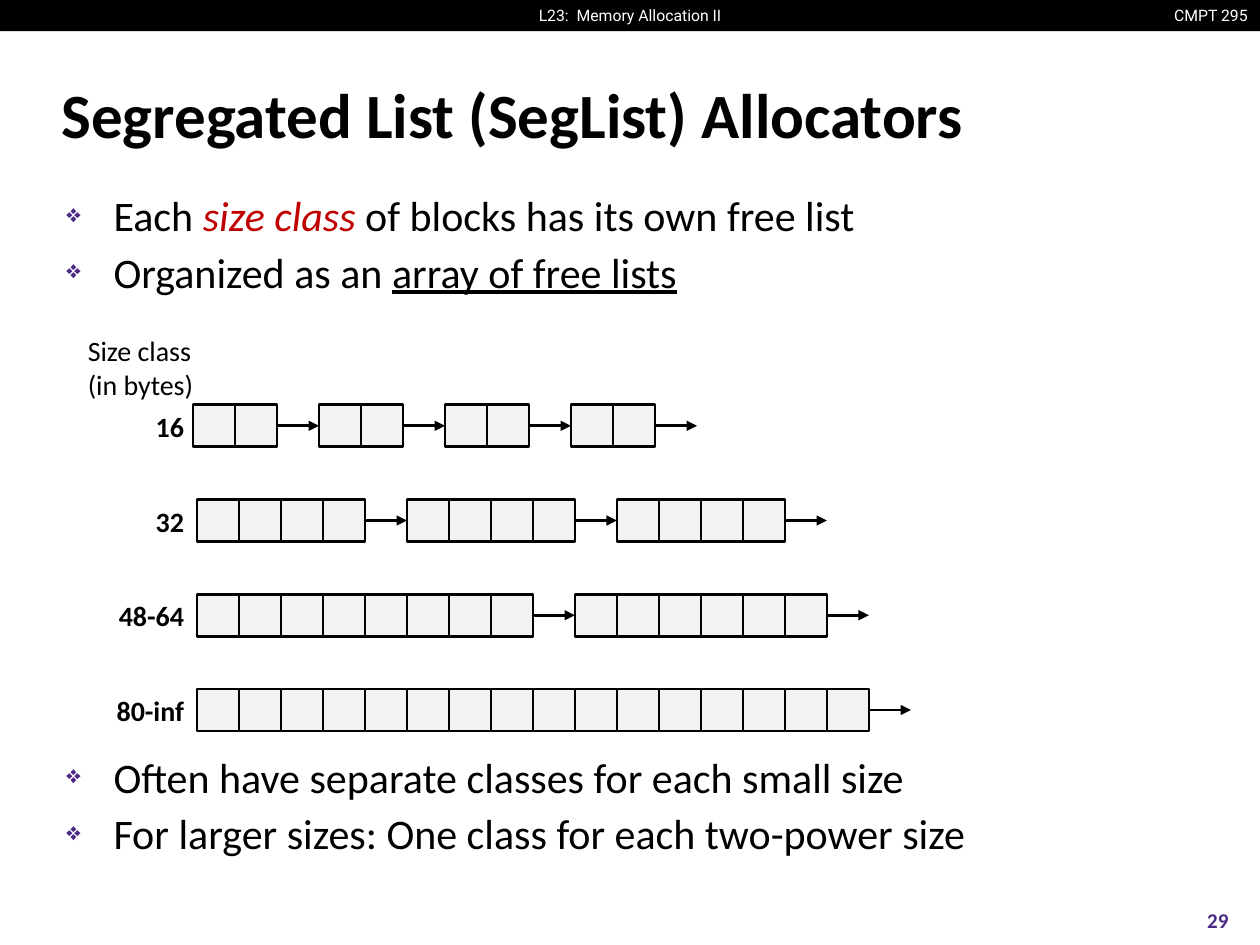
"""Build the slide on segregated list allocators."""
import dataclasses

import lxml.etree
import pptx
import pptx.dml.color
import pptx.enum.shapes
import pptx.enum.text
import pptx.oxml.ns
import pptx.util

Cm = pptx.util.Cm
Pt = pptx.util.Pt
ALIGN = pptx.enum.text.PP_ALIGN
ANCHOR = pptx.enum.text.MSO_ANCHOR


@dataclasses.dataclass(frozen=True)
class Theme:
    black: str = "000000"
    white: str = "FFFFFF"
    cell: str = "F2F2F2"
    accent: str = "4B2A85"
    emphasis: str = "C00000"
    body_font: str = "Calibri"
    header_font: str = "Roboto"
    header: int = 9
    number: int = 12
    label: int = 16
    body: int = 24
    title: int = 36
    line: float = 1.5


THEME = Theme()
CELL = Cm(2.54 / 3)
ROW_TOP = Cm(8.16)
ROW_PITCH = Cm(1.91)
ROWS = [
    ("16", Cm(3.89), [2, 2, 2, 2]),
    ("32", Cm(3.97), [4, 4, 4]),
    ("48-64", Cm(3.97), [8, 6]),
    ("80-inf", Cm(3.97), [16]),
]
TOP_BULLETS = [
    [("Each ", None), ("size class ", "italic"), ("of blocks has its own free list", None)],
    [("Organized as an ", None), ("array of free lists", "underline")],
]
BOTTOM_BULLETS = [
    [("Often have separate classes for each small size", None)],
    [("For larger sizes: One class for each two-power size", None)],
]


def rgb(color):
    return pptx.dml.color.RGBColor.from_string(color)


def set_font(font, size, color=THEME.black, bold=False, name=THEME.body_font):
    font.name, font.size, font.bold = name, Pt(size), bold
    font.color.rgb = rgb(color)


def add_frame(s, x, y, w, h, wrap=True, anchor=ANCHOR.TOP):
    tf = s.shapes.add_textbox(x, y, w, h).text_frame
    tf.word_wrap = wrap
    tf.vertical_anchor = anchor
    return tf


def add_text(s, text, box, size, align=ALIGN.LEFT, wrap=False, anchor=ANCHOR.TOP, **font):
    p = add_frame(s, *box, wrap, anchor).paragraphs[0]
    p.text = text
    p.alignment = align
    set_font(p.font, size, **font)


def add_rect(s, x, y, w, h, fill, line=None):
    sp = s.shapes.add_shape(pptx.enum.shapes.MSO_SHAPE.RECTANGLE, x, y, w, h)
    sp.shadow.inherit = False
    sp.fill.solid()
    sp.fill.fore_color.rgb = rgb(fill)
    if line:
        sp.line.color.rgb = rgb(line)
        sp.line.width = Pt(THEME.line)
    else:
        sp.line.fill.background()
    return sp


def add_child(parent, tag, **attrs):
    return lxml.etree.SubElement(parent, pptx.oxml.ns.qn(tag), attrs)


def add_bullet(p):
    pPr = p._p.get_or_add_pPr()
    pPr.set("marL", str(Cm(0.95)))
    pPr.set("indent", str(-Cm(0.95)))
    add_child(add_child(pPr, "a:buClr"), "a:srgbClr", val=THEME.accent)
    add_child(pPr, "a:buSzPct", val="60000")
    add_child(pPr, "a:buChar", char="❖")


def add_bullets(s, items, y):
    tf = add_frame(s, Cm(1.09), y, Cm(23.24), Cm(2.7))
    for i, runs in enumerate(items):
        p = tf.paragraphs[0] if i == 0 else tf.add_paragraph()
        add_bullet(p)
        p.line_spacing = 0.95
        p.space_before = Pt(4.8)
        set_font(p.font, THEME.body)
        for text, style in runs:
            r = p.add_run()
            r.text = text
            if style == "italic":
                r.font.italic = True
                r.font.color.rgb = rgb(THEME.emphasis)
            elif style == "underline":
                r.font.underline = True


def add_arrow(s, start, end=None):
    x, y = start.left + CELL, start.top + CELL // 2
    c = s.shapes.add_connector(pptx.enum.shapes.MSO_CONNECTOR.STRAIGHT, x, y, x + CELL, y)
    c.begin_connect(start, 3)
    if end is not None:
        c.end_connect(end, 1)
    c.line.color.rgb = rgb(THEME.black)
    c.line.width = Pt(THEME.line)
    add_child(c.line._get_or_add_ln(), "a:tailEnd", type="triangle")
    add_child(c._element.spPr, "a:effectLst")


def add_free_list(s, label, x, y, blocks):
    add_text(s, label, (Cm(1.96), y - Cm(0.03), Cm(2), Cm(0.94)), THEME.label,
             ALIGN.RIGHT, wrap=True, bold=True)
    last = None
    for size in blocks:
        cells = [add_rect(s, x + i * CELL, y, CELL, CELL, THEME.cell, THEME.black)
                 for i in range(size)]
        if last is not None:
            add_arrow(s, last, cells[0])
        last = cells[-1]
        x += (size + 1) * CELL
    add_arrow(s, last)


def add_header(s, width):
    add_rect(s, 0, 0, width, Cm(0.63), THEME.black)
    for text, x, w, align in [("CMPT 295", 23.34, 2.06, ALIGN.RIGHT),
                              ("L23:  Memory Allocation II", 10.59, 4.22, ALIGN.CENTER)]:
        add_text(s, text, (Cm(x), 0, Cm(w), Cm(0.63)), THEME.header, align,
                 color=THEME.white, name=THEME.header_font)


def main():
    prs = pptx.Presentation()
    prs.slide_width, prs.slide_height = Cm(25.4), Cm(19.05)
    s = prs.slides.add_slide(prs.slide_layouts[6])
    add_header(s, prs.slide_width)
    add_text(s, "Segregated List (SegList) Allocators", (Cm(0.99), Cm(1.22), Cm(23.34), Cm(2.11)),
             THEME.title, wrap=True, anchor=ANCHOR.MIDDLE, bold=True)
    add_bullets(s, TOP_BULLETS, Cm(3.78))
    add_bullets(s, BOTTOM_BULLETS, Cm(15.1))
    add_text(s, "29", (Cm(23.7), Cm(18.03), Cm(1.7), Cm(1.02)), THEME.number, ALIGN.CENTER,
             wrap=True, anchor=ANCHOR.MIDDLE, color=THEME.accent, bold=True)
    for i, (label, x, blocks) in enumerate(ROWS):
        add_free_list(s, label, x, ROW_TOP + i * ROW_PITCH, blocks)
    add_text(s, "Size class\n(in bytes)", (Cm(1.52), Cm(6.6), Cm(2.67), Cm(1.63)), THEME.label)
    prs.save("out.pptx")


if __name__ == "__main__":
    main()
